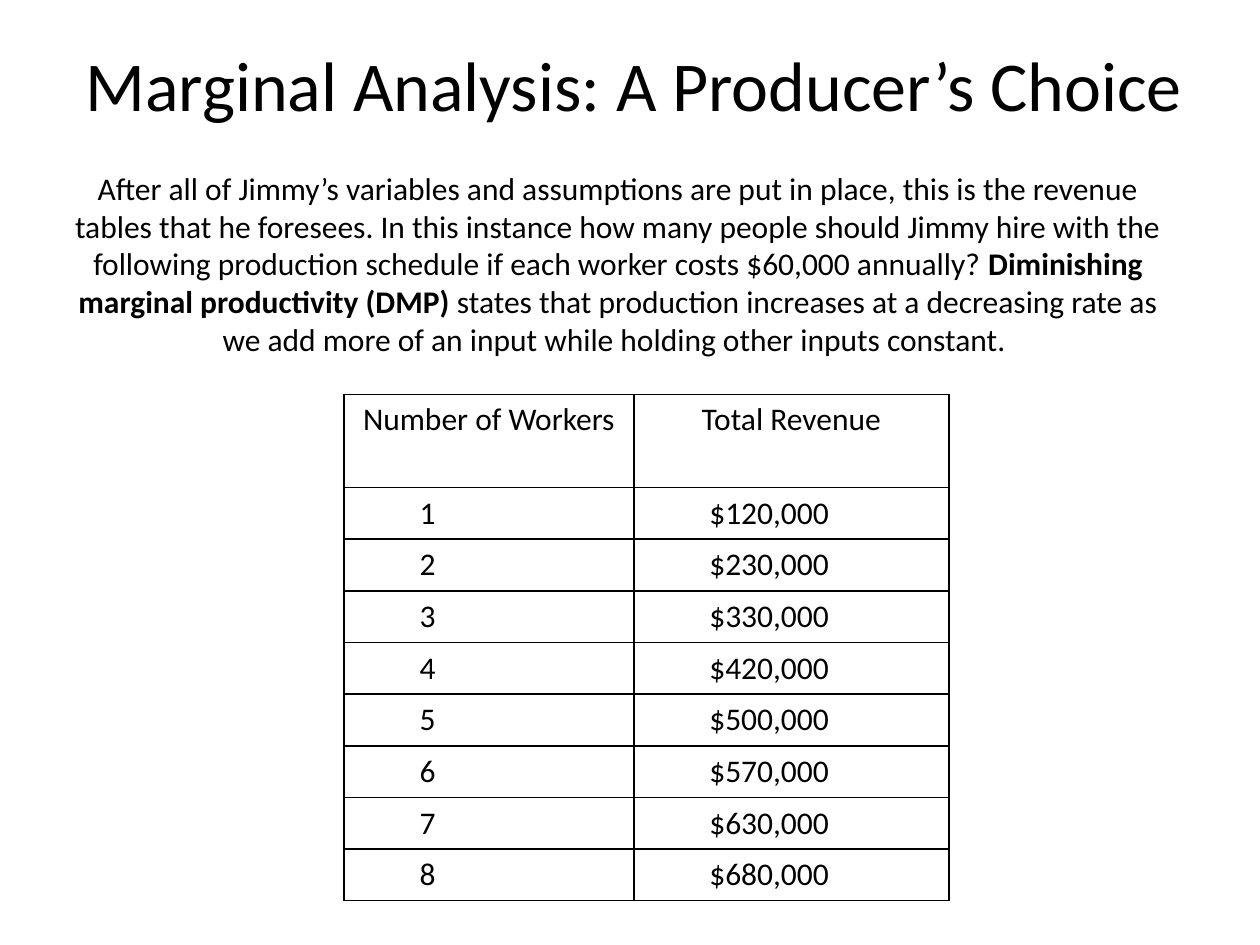
from dataclasses import dataclass

from lxml.etree import SubElement
from pptx import Presentation
from pptx.dml.color import RGBColor
from pptx.enum.text import MSO_ANCHOR as Anchor, PP_ALIGN as Align
from pptx.oxml.ns import qn
from pptx.util import Inches, Pt


@dataclass(frozen=True)
class Theme:
    font: str = "Calibri"
    ink: RGBColor = RGBColor(0, 0, 0)
    paper: RGBColor = RGBColor(255, 255, 255)
    title_size: Pt = Pt(40)
    body_size: Pt = Pt(18)
    border: Pt = Pt(1)


THEME = Theme()
TITLE = "Marginal Analysis: A Producer’s Choice"
# Each part of the question is its wording and whether it is bold
QUESTION = [
    ("After all of Jimmy’s variables and assumptions are put in place, this is "
     "the revenue tables that he foresees. In this instance how many people "
     "should Jimmy hire with the following production schedule if each worker "
     "costs $60,000 annually? ", False),
    ("Diminishing marginal productivity (DMP) ", True),
    ("states that production increases at a decreasing rate as we add more of "
     "an input while holding other inputs constant. ", False),
]
HEADINGS = ("Number of Workers", "Total Revenue")
REVENUES = (120, 230, 330, 420, 500, 570, 630, 680)  # thousands of dollars
COLUMN_WIDTHS = (2.3, 2.5)
HEADING_HEIGHT, ROW_HEIGHT = 0.74, 0.41
FIGURE_INDENT = Inches(0.5)


def set_all(target, values):
    for name, value in values.items():
        setattr(target, name, value)


def write(paragraph, parts, size, align):
    paragraph.alignment = align
    for wording, bold in parts:
        run = paragraph.add_run()
        run.text = wording
        set_all(run.font, {"name": THEME.font, "size": size, "bold": bold})
        run.font.color.rgb = THEME.ink


def add_text(slide, box, parts, size, anchor):
    frame = slide.shapes.add_textbox(*map(Inches, box)).text_frame
    set_all(frame, {"word_wrap": True, "vertical_anchor": anchor})
    write(frame.paragraphs[0], parts, size, Align.CENTER)


def outline(cell):
    properties = cell._tc.get_or_add_tcPr()
    for side in ("lnL", "lnR", "lnT", "lnB"):
        line = SubElement(properties, qn(f"a:{side}"), w=str(THEME.border))
        fill = SubElement(line, qn("a:solidFill"))
        SubElement(fill, qn("a:srgbClr"), val=str(THEME.ink))
    cell.fill.background()


def fill_cell(cell, wording, heading):
    outline(cell)
    cell.vertical_anchor = Anchor.TOP if heading else Anchor.MIDDLE
    paragraph = cell.text_frame.paragraphs[0]
    write(paragraph, [(wording, False)], THEME.body_size,
          Align.CENTER if heading else Align.LEFT)
    if not heading:
        set_all_indent = {"marL": "0", "indent": str(FIGURE_INDENT)}
        paragraph._p.get_or_add_pPr().attrib.update(set_all_indent)


def add_schedule(slide, left, top):
    rows = [HEADINGS] + [(str(workers), f"${revenue},000")
                         for workers, revenue in enumerate(REVENUES, 1)]
    height = HEADING_HEIGHT + ROW_HEIGHT * len(REVENUES)
    schedule = slide.shapes.add_table(
        len(rows), len(HEADINGS), Inches(left), Inches(top),
        Inches(sum(COLUMN_WIDTHS)), Inches(height)).table
    set_all(schedule, {"first_row": False, "horz_banding": False})
    for column, width in zip(schedule.columns, COLUMN_WIDTHS):
        column.width = Inches(width)
    for r, row in enumerate(rows):
        schedule.rows[r].height = Inches(ROW_HEIGHT if r else HEADING_HEIGHT)
        for c, wording in enumerate(row):
            fill_cell(schedule.cell(r, c), wording, heading=r == 0)


def main():
    deck = Presentation()
    set_all(deck, {"slide_width": Inches(10), "slide_height": Inches(7.5)})
    slide = deck.slides.add_slide(deck.slide_layouts[6])
    slide.background.fill.solid()
    slide.background.fill.fore_color.rgb = THEME.paper

    # Title and question
    add_text(slide, (0.53, 0.04, 9, 1.25), [(TITLE, False)],
             THEME.title_size, Anchor.MIDDLE)
    add_text(slide, (0.47, 1.29, 8.87, 1.92), QUESTION,
             THEME.body_size, Anchor.TOP)

    # Production schedule
    add_schedule(slide, left=2.73, top=3.13)

    deck.save("out.pptx")


if __name__ == "__main__":
    main()
